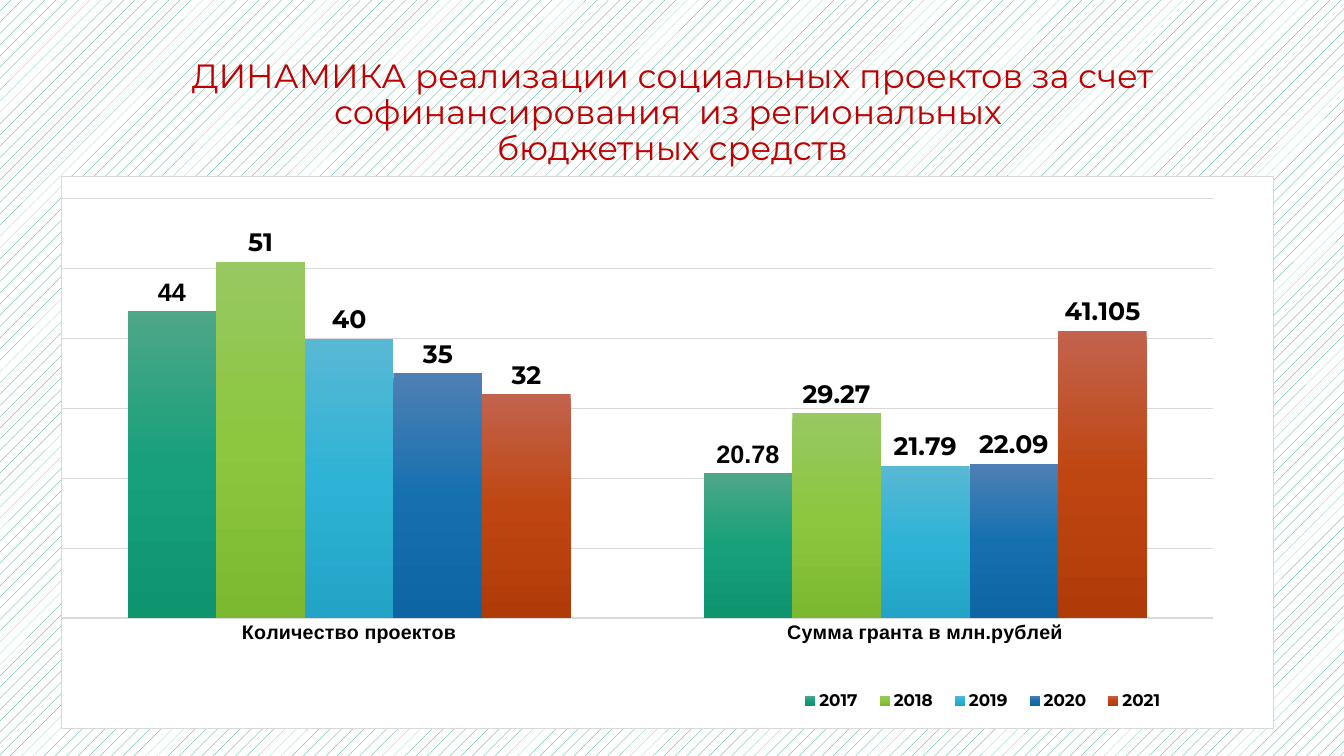
from lxml import etree
from pptx import Presentation
from pptx.chart.data import CategoryChartData
from pptx.dml.color import RGBColor
from pptx.enum.chart import (
    XL_CHART_TYPE as ChartType,
    XL_LABEL_POSITION as LabelPosition,
    XL_LEGEND_POSITION as LegendPosition,
    XL_TICK_MARK as TickMark,
)
from pptx.enum.dml import MSO_PATTERN as Pattern
from pptx.enum.text import MSO_ANCHOR as Anchor, PP_ALIGN as Align
from pptx.oxml import parse_xml
from pptx.oxml.ns import nsdecls, qn
from pptx.util import Inches, Pt

TEAL = RGBColor(0x1D, 0x9A, 0x78)
WHITE = RGBColor(0xFF, 0xFF, 0xFF)
BLACK = RGBColor(0x00, 0x00, 0x00)
RED = RGBColor(0xC0, 0x00, 0x00)
GREY = RGBColor(0xD9, 0xD9, 0xD9)

CATEGORIES = ["Количество проектов", "Сумма гранта в млн.рублей"]
# year: (values, gradient from top to bottom, label font)
YEARS = {
    "2017": ((44, 20.78), ("4EA788", "17A07B", "0F9470"), "Arial"),
    "2018": ((51, 29.27), ("98C862", "8CC73F", "7DB831"), "Montserrat"),
    "2019": ((40, 21.79), ("59B8D4", "2EB3D6", "21A4C6"), "Montserrat"),
    "2020": ((35, 22.09), ("4E80B5", "1670B0", "0D65A3"), "Montserrat"),
    "2021": ((32, 41.105), ("C2634D", "BF4611", "B13B08"), "Montserrat"),
}


def set_font(font, name, size, color=BLACK, bold=False):
    font.name, font.size, font.bold = name, Pt(size), bold
    font.color.rgb = color


def set_layout(element, index, x, y, w, h, inner=False):
    """Place a chart part by fractions of the chart area."""
    for old in element.findall(qn("c:layout")):
        element.remove(old)
    layout = etree.Element(qn("c:layout"))
    manual = etree.SubElement(layout, qn("c:manualLayout"))
    settings = {"layoutTarget": "inner"} if inner else {}
    settings |= {"xMode": "edge", "yMode": "edge", "x": x, "y": y, "w": w, "h": h}
    for tag, value in settings.items():
        etree.SubElement(manual, qn(f"c:{tag}")).set("val", str(value))
    element.insert(index, layout)


def set_gradient(series, colors):
    """Fill bars with evenly spaced colours running downwards."""
    step = 100000 // (len(colors) - 1)
    stops = "".join(
        f'<a:gs pos="{i * step}"><a:srgbClr val="{color}"/></a:gs>'
        for i, color in enumerate(colors)
    )
    series._element.get_or_add_spPr().append(parse_xml(
        f'<a:gradFill {nsdecls("a")} rotWithShape="1"><a:gsLst>{stops}</a:gsLst>'
        '<a:lin ang="5400000" scaled="0"/></a:gradFill>'
    ))


def set_chart_frame(chart, fill, border, width):
    chart_root = chart._chartSpace
    chart_root.find(qn("c:chart")).addnext(parse_xml(
        f'<c:spPr {nsdecls("c", "a")}>'
        f'<a:solidFill><a:srgbClr val="{fill}"/></a:solidFill>'
        f'<a:ln w="{Pt(width)}"><a:solidFill><a:srgbClr val="{border}"/>'
        '</a:solidFill></a:ln></c:spPr>'
    ))


class ProjectSlide:
    def __init__(self, presentation):
        self.slide = presentation.slides.add_slide(presentation.slide_layouts[6])

    def background(self):
        fill = self.slide.background.fill
        fill.patterned()
        fill.pattern = Pattern.PERCENT_10
        fill.fore_color.rgb = TEAL
        fill.back_color.rgb = WHITE

    def text(self, text, left, top, width, height, **style):
        box = self.slide.shapes.add_textbox(
            Inches(left), Inches(top), Inches(width), Inches(height))
        frame = box.text_frame
        frame.word_wrap = True
        frame.vertical_anchor = Anchor.MIDDLE
        paragraph = frame.paragraphs[0]
        paragraph.text = text
        paragraph.alignment = Align.CENTER
        paragraph.line_spacing = 0.9
        for run in paragraph.runs:
            set_font(run.font, **style)

    def column_chart(self, left, top, width, height):
        data = CategoryChartData()
        data.categories = CATEGORIES
        for year, (values, _, _) in YEARS.items():
            data.add_series(year, values)
        chart = self.slide.shapes.add_chart(
            ChartType.COLUMN_CLUSTERED, Inches(left), Inches(top),
            Inches(width), Inches(height), data).chart
        chart.has_title = False
        set_font(chart.font, "Calibri", 10)
        set_chart_frame(chart, WHITE, GREY, 0.75)
        set_layout(chart._chartSpace.chart.plotArea, 0, 0, 0.04, 0.95, 0.76, inner=True)
        self.style_axes(chart)
        self.style_series(chart.plots[0])
        self.style_legend(chart)

    def style_axes(self, chart):
        categories, values = chart.category_axis, chart.value_axis
        categories.major_tick_mark = categories.minor_tick_mark = TickMark.NONE
        categories.format.line.color.rgb = GREY
        categories.format.line.width = Pt(1)
        set_font(categories.tick_labels.font, "Arial", 14, bold=True)
        values.minimum_scale, values.maximum_scale, values.major_unit = 0, 60, 10
        values.visible = False
        values.has_major_gridlines = True
        grid = values.major_gridlines.format.line
        grid.color.rgb = GREY
        grid.width = Pt(0.75)

    def style_series(self, plot):
        plot.gap_width, plot.overlap = 150, 0
        plot.vary_by_categories = False
        for series, (_, colors, label_font) in zip(plot.series, YEARS.values()):
            set_gradient(series, colors)
            labels = series.data_labels
            labels.show_value = True
            labels.position = LabelPosition.OUTSIDE_END
            set_font(labels.font, label_font, 18, bold=True)

    def style_legend(self, chart):
        chart.has_legend = True
        legend = chart.legend
        legend.position = LegendPosition.BOTTOM
        legend.include_in_layout = False
        set_font(legend.font, "Montserrat", 12, bold=True)
        set_layout(legend._element, 1, 0.6, 0.92, 0.32, 0.06)


def main():
    presentation = Presentation()
    presentation.slide_width = Inches(13.33)
    presentation.slide_height = Inches(7.5)
    slide = ProjectSlide(presentation)
    slide.background()
    slide.text(
        "ДИНАМИКА реализации социальных проектов за счет "
        "софинансирования  из региональных \vбюджетных средств",
        0.92, 0.4, 11.5, 1.45, name="Montserrat", size=24, color=RED)
    slide.column_chart(0.6, 1.75, 12.04, 5.48)
    presentation.save("out.pptx")


if __name__ == "__main__":
    main()
